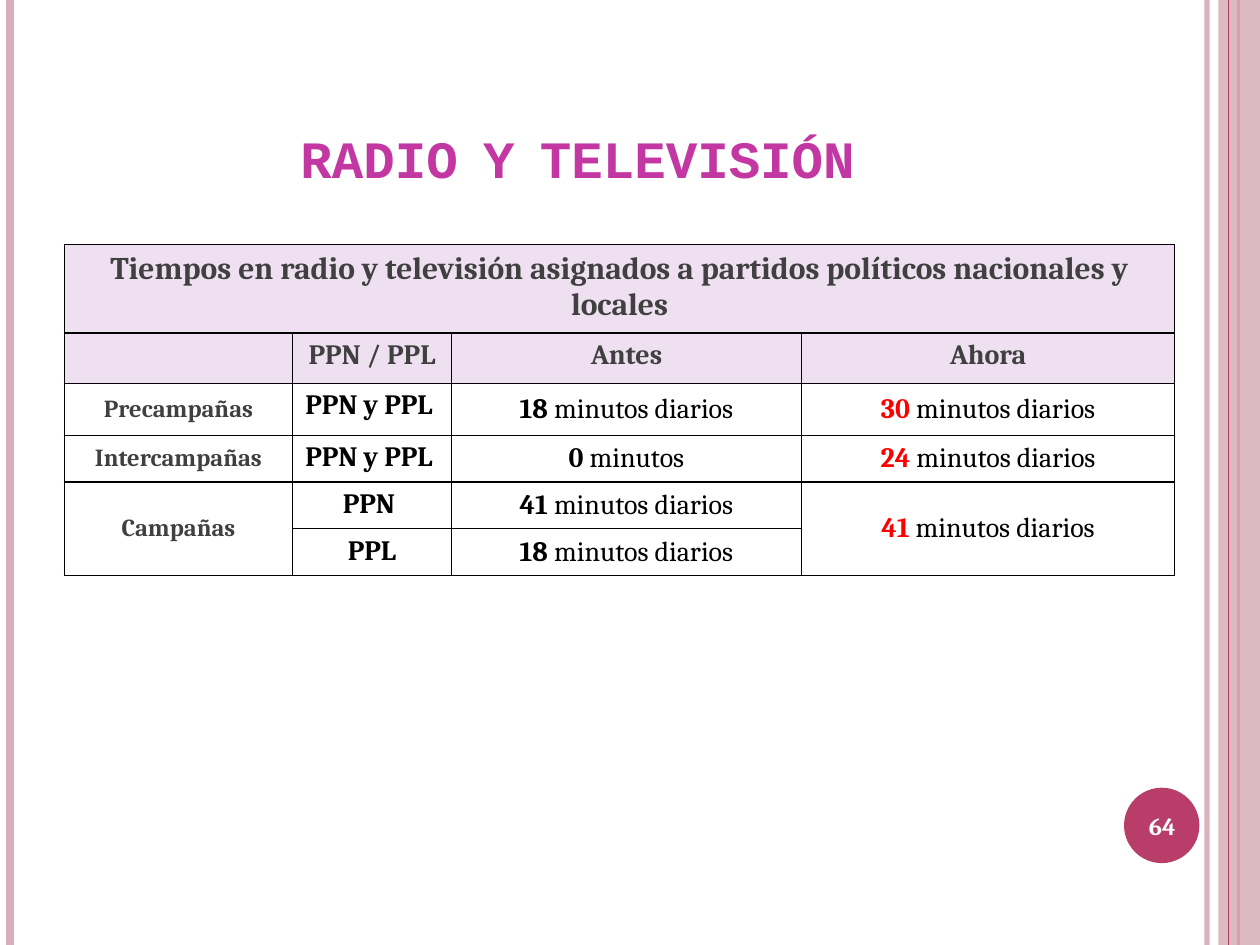
from lxml import etree
from pptx import Presentation
from pptx.dml.color import RGBColor
from pptx.enum import shapes, text
from pptx.oxml import ns
from pptx.util import Cm, Pt

PINK = RGBColor(0xD8, 0xAF, 0xB9)
CRIMSON = RGBColor(0xB8, 0x3D, 0x68)
MAGENTA = RGBColor(0xC3, 0x37, 0xA2)
LILAC = RGBColor(0xEE, 0xE0, 0xF1)
GRAY = RGBColor(0x40, 0x40, 0x40)
RED = RGBColor(0xFF, 0, 0)
BLACK = RGBColor(0, 0, 0)
WHITE = RGBColor(0xFF, 0xFF, 0xFF)

PAGE_WIDTH, PAGE_HEIGHT = 25.4, 19.05
COLUMN_WIDTHS = [4.6, 3.2, 7.06, 7.52]
ROW_HEIGHTS = [1.71, 1.02, 1.05, 0.94, 0.94, 0.94]
HEADINGS = ["", "PPN / PPL", "Antes", "Ahora"]
BODY = [
    ["Precampañas", "PPN y PPL ", ("18", " minutos diarios"), ("30", " minutos diarios")],
    ["Intercampañas", "PPN y PPL ", ("0", " minutos"), ("24", " minutos diarios")],
    ["Campañas", "PPN ", ("41", " minutos diarios"), ("41 ", "minutos diarios")],
    [None, "PPL", ("18", " minutos diarios"), None],
]


def add_span(para, words, size, color, bold=True, font="Cambria"):
    span = para.add_run()
    span.text = words
    span.font.name = font
    span.font.size = Pt(size)
    span.font.bold = bold
    span.font.color.rgb = color
    para.alignment = text.PP_ALIGN.CENTER
    return span


def set_alpha(fill_parent, percent):
    color = fill_parent.find(".//" + ns.qn("a:srgbClr"))
    etree.SubElement(color, ns.qn("a:alpha"), val=str(percent * 1000))


def add_vertical_line(page, x, width, color, alpha=None):
    line = page.shapes.add_connector(
        shapes.MSO_CONNECTOR.STRAIGHT, Cm(x), 0, Cm(x), Cm(PAGE_HEIGHT))
    line.line.color.rgb = color
    line.line.width = Pt(width)
    properties = line._element.spPr
    if alpha:
        set_alpha(properties, alpha)
    etree.SubElement(properties, ns.qn("a:effectLst"))


def add_filled_shape(page, kind, left, top, width, height, color):
    shape = page.shapes.add_shape(kind, Cm(left), Cm(top), Cm(width), Cm(height))
    shape.shadow.inherit = False
    shape.fill.solid()
    shape.fill.fore_color.rgb = color
    shape.line.fill.background()
    return shape


def add_decoration(page):
    add_vertical_line(page, 24.33, 3, PINK, 93)
    add_vertical_line(page, 0.2, 4.5, PINK)
    add_vertical_line(page, 24.97, 1.5, CRIMSON)
    band = add_filled_shape(page, shapes.MSO_SHAPE.RECTANGLE,
                            24.56, 0, PAGE_WIDTH - 24.56, PAGE_HEIGHT, PINK)
    set_alpha(band._element.spPr, 87)
    add_vertical_line(page, 24.77, 0.75, CRIMSON)
    add_filled_shape(page, shapes.MSO_SHAPE.OVAL, 22.66, 15.88, 1.52, 1.52, CRIMSON)


def format_title(page):
    title = page.shapes.title
    title.left, title.top, title.width, title.height = Cm(1.27), Cm(0.76), Cm(20.75), Cm(3.18)
    frame = title.text_frame
    frame.vertical_anchor = text.MSO_ANCHOR.BOTTOM
    span = add_span(frame.paragraphs[0], "RADIO Y TELEVISIÓN", 30, MAGENTA, font="Courier New")
    span.font._element.set("cap", "small")


def add_page_number(page):
    box = page.shapes.add_textbox(Cm(22.58), Cm(15.93), Cm(1.7), Cm(1.45))
    frame = box.text_frame
    frame.word_wrap = True
    frame.vertical_anchor = text.MSO_ANCHOR.MIDDLE
    add_span(frame.paragraphs[0], "64", 14, WHITE)


def format_cell(cell, fill=None):
    properties = cell._tc.get_or_add_tcPr()
    for side in ("lnL", "lnR", "lnT", "lnB"):
        border = etree.SubElement(properties, ns.qn("a:" + side), w=str(Pt(1)))
        solid = etree.SubElement(border, ns.qn("a:solidFill"))
        etree.SubElement(solid, ns.qn("a:srgbClr"), val=str(BLACK))
    if fill:
        cell.fill.solid()
        cell.fill.fore_color.rgb = fill
    else:
        cell.fill.background()


def fill_body_cell(cell, column, content):
    para = cell.text_frame.paragraphs[0]
    if column != 1:
        cell.vertical_anchor = text.MSO_ANCHOR.MIDDLE
    if column == 0:
        add_span(para, content, 14, GRAY)
    elif column == 1:
        add_span(para, content, 16, BLACK)
    else:
        amount, unit = content
        add_span(para, amount, 16, RED if column == 3 else BLACK)
        add_span(para, unit, 16, BLACK, bold=False)


def add_times_table(page):
    table = page.shapes.add_table(
        len(ROW_HEIGHTS), len(COLUMN_WIDTHS), Cm(1.3), Cm(4.93),
        Cm(sum(COLUMN_WIDTHS)), Cm(sum(ROW_HEIGHTS))).table
    table.first_row = table.horz_banding = False
    for column, width in zip(table.columns, COLUMN_WIDTHS):
        column.width = Cm(width)
    for row, height in zip(table.rows, ROW_HEIGHTS):
        row.height = Cm(height)
    for index, row in enumerate(table.rows):
        for cell in row.cells:
            format_cell(cell, LILAC if index < 2 else None)

    table.cell(0, 0).merge(table.cell(0, 3))
    for column in (0, 3):
        table.cell(4, column).merge(table.cell(5, column))

    add_span(table.cell(0, 0).text_frame.paragraphs[0],
             "Tiempos en radio y televisión asignados a partidos políticos nacionales y locales",
             18, GRAY)
    for column, heading in enumerate(HEADINGS):
        if heading:
            add_span(table.cell(1, column).text_frame.paragraphs[0], heading, 16, GRAY)
    for row, contents in enumerate(BODY, start=2):
        for column, content in enumerate(contents):
            if content:
                fill_body_cell(table.cell(row, column), column, content)


def main():
    deck = Presentation()
    deck.slide_width, deck.slide_height = Cm(PAGE_WIDTH), Cm(PAGE_HEIGHT)
    page = deck.slides.add_slide(deck.slide_layouts[5])
    add_decoration(page)
    format_title(page)
    add_page_number(page)
    add_times_table(page)
    deck.save("out.pptx")


if __name__ == "__main__":
    main()
